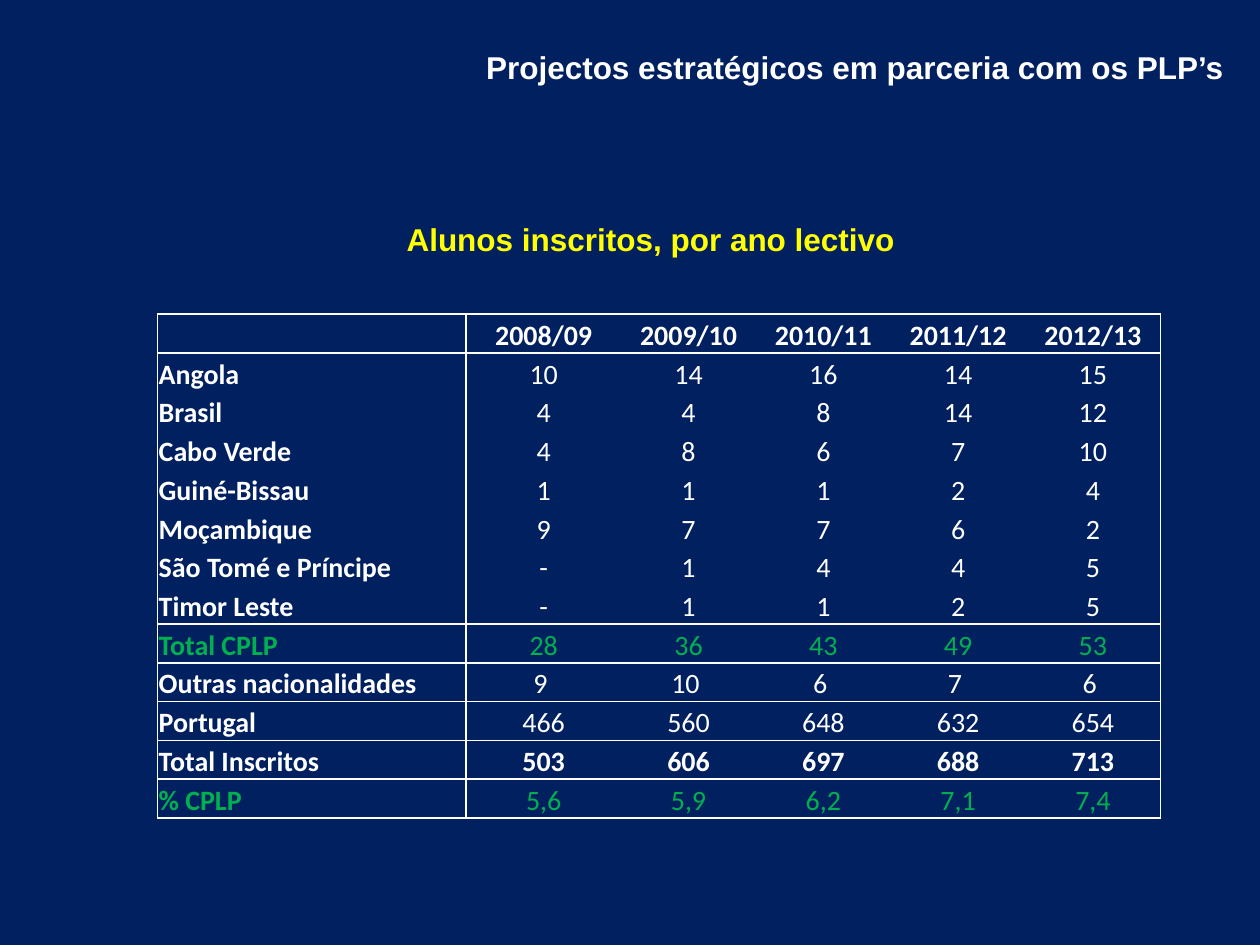
from lxml.etree import SubElement
from pptx import Presentation
from pptx.dml.color import RGBColor
from pptx.enum.text import MSO_ANCHOR, MSO_AUTO_SIZE, PP_ALIGN
from pptx.oxml.ns import qn
from pptx.util import Inches, Pt

WHITE, YELLOW, GREEN, NAVY = "FFFFFF", "FFFF00", "00B050", "002060"

TITLE = "Projectos estratégicos em parceria com os PLP’s"
SUBTITLE = "Alunos inscritos, por ano lectivo"
ENROLMENT = [
    ("", "2008/09", "2009/10", "2010/11", "2011/12", "2012/13"),
    ("Angola", "10", "14", "16", "14", "15"),
    ("Brasil", "4", "4", "8", "14", "12"),
    ("Cabo Verde", "4", "8", "6", "7", "10"),
    ("Guiné-Bissau", "1", "1", "1", "2", "4"),
    ("Moçambique", "9", "7", "7", "6", "2"),
    ("São Tomé e Príncipe", "-", "1", "4", "4", "5"),
    ("Timor Leste", "-", "1", "1", "2", "5"),
    ("Total CPLP", "28", "36", "43", "49", "53"),
    ("Outras nacionalidades", "9 ", "10 ", "6 ", "7 ", "6 "),
    ("Portugal", "466", "560", "648", "632", "654"),
    ("Total Inscritos", "503", "606", "697", "688", "713"),
    ("% CPLP", "5,6", "5,9", "6,2", "7,1", "7,4"),
]
COLUMN_WIDTHS = [2.45, 1.23] + [1.07] * 4
TABLE_HEIGHT = 4
GREEN_ROWS = {"Total CPLP", "% CPLP"}
BOLD_ROWS = {"", "Total Inscritos"}
# Grid lines drawn, counted from the top and from the left
RULED_ROWS = {0, 1, *range(8, len(ENROLMENT) + 1)}
RULED_COLUMNS = {0, 1, len(COLUMN_WIDTHS)}


def rgb(value):
    return RGBColor.from_string(value)


def write(paragraph, text, color, align=PP_ALIGN.CENTER, **font_format):
    paragraph.alignment = align
    run = paragraph.add_run()
    run.text = text
    run.font.color.rgb = rgb(color)
    for name, value in font_format.items():
        setattr(run.font, name, value)


def place_heading(shape, text, color, left, top, width):
    shape.left, shape.top = Inches(left), Inches(top)
    shape.width, shape.height = Inches(width), Inches(0.4)
    frame = shape.text_frame
    frame.word_wrap = True
    frame.auto_size = MSO_AUTO_SIZE.SHAPE_TO_FIT_TEXT
    write(frame.paragraphs[0], text, color, name="Arial", size=Pt(18), bold=True)


def set_borders(cell, row, column):
    """Draw the ruled sides of a cell and clear the others."""
    ruled_sides = {
        "a:lnL": column in RULED_COLUMNS,
        "a:lnR": column + 1 in RULED_COLUMNS,
        "a:lnT": row in RULED_ROWS,
        "a:lnB": row + 1 in RULED_ROWS,
    }
    properties = cell._tc.get_or_add_tcPr()
    for position, (side, ruled) in enumerate(ruled_sides.items()):
        line = SubElement(properties, qn(side), w=str(Pt(1)))
        properties.insert(position, line)
        if ruled:
            fill = SubElement(line, qn("a:solidFill"))
            SubElement(fill, qn("a:srgbClr"), val=WHITE)
        else:
            SubElement(line, qn("a:noFill"))


def add_enrolment_table(slide):
    table = slide.shapes.add_table(
        len(ENROLMENT), len(COLUMN_WIDTHS), Inches(1.25), Inches(2.49),
        Inches(sum(COLUMN_WIDTHS)), Inches(TABLE_HEIGHT)).table
    table.first_row = table.horz_banding = False
    for column, width in zip(table.columns, COLUMN_WIDTHS):
        column.width = Inches(width)

    cell_format = {
        "vertical_anchor": MSO_ANCHOR.BOTTOM,
        "margin_left": Inches(0.01),
        "margin_right": Inches(0.01),
        "margin_top": Inches(0.01),
        "margin_bottom": 0,
    }
    for r, values in enumerate(ENROLMENT):
        table.rows[r].height = Inches(TABLE_HEIGHT / len(ENROLMENT))
        country = values[0]
        color = GREEN if country in GREEN_ROWS else WHITE
        for c, value in enumerate(values):
            cell = table.cell(r, c)
            for name, setting in cell_format.items():
                setattr(cell, name, setting)
            cell.fill.background()
            set_borders(cell, r, c)
            write(cell.text_frame.paragraphs[0], value, color,
                  PP_ALIGN.LEFT if c == 0 else PP_ALIGN.CENTER,
                  name="Calibri", size=Pt(16),
                  bold=c == 0 or country in BOLD_ROWS)


def main():
    presentation = Presentation()
    presentation.slide_width, presentation.slide_height = Inches(10), Inches(7.5)
    slide = presentation.slides.add_slide(presentation.slide_layouts[5])
    slide.background.fill.solid()
    slide.background.fill.fore_color.rgb = rgb(NAVY)

    place_heading(slide.shapes.title, TITLE, WHITE, 3.57, 0.33, 6.43)
    subtitle = slide.shapes.add_textbox(0, 0, 0, 0)
    place_heading(subtitle, SUBTITLE, YELLOW, 1.68, 1.7, 6.97)
    add_enrolment_table(slide)
    presentation.save("out.pptx")


if __name__ == "__main__":
    main()
